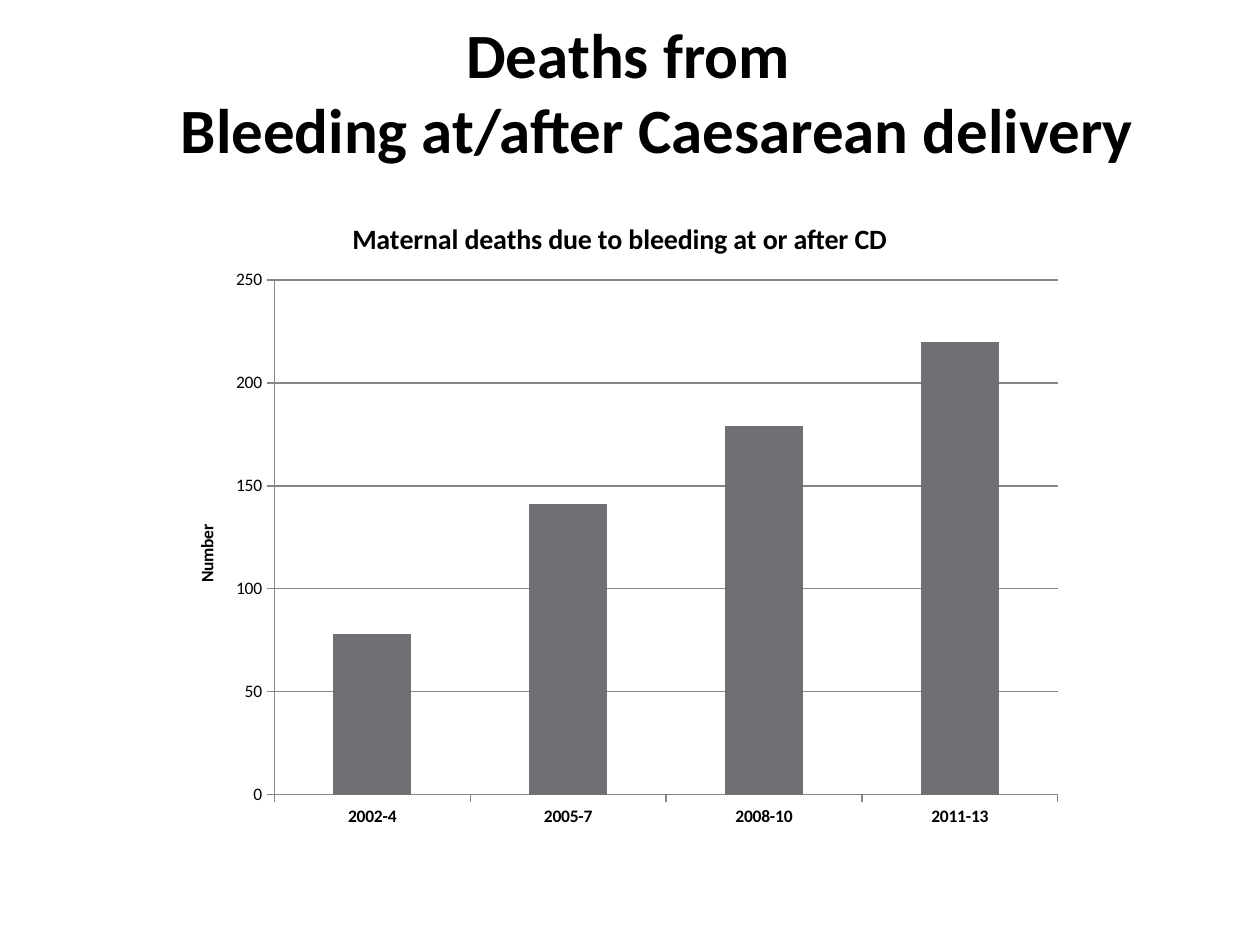
from lxml.etree import SubElement
from pptx import Presentation
from pptx.chart.data import CategoryChartData
from pptx.dml.color import RGBColor
from pptx.enum.chart import XL_CHART_TYPE, XL_TICK_MARK
from pptx.enum.text import MSO_ANCHOR, PP_ALIGN
from pptx.oxml.ns import qn
from pptx.util import Inches, Pt

BLACK = RGBColor(0x00, 0x00, 0x00)
BAR_GREY = RGBColor(0x6F, 0x6F, 0x74)
LINE_GREY = RGBColor(0x86, 0x86, 0x86)
FONT = "Calibri"


def set_values(target, values):
    for name, value in values.items():
        setattr(target, name, value)


def place(element, index, **fractions):
    """Give a chart part a manual layout in fractions of the chart area."""
    for old_layout in element.findall(qn("c:layout")):
        element.remove(old_layout)
    layout = SubElement(element, qn("c:layout"))
    element.insert(index, layout)
    manual = SubElement(layout, qn("c:manualLayout"))
    if "w" in fractions:
        SubElement(manual, qn("c:layoutTarget")).set("val", "inner")
    for axis in ("x", "y"):
        SubElement(manual, qn(f"c:{axis}Mode")).set("val", "edge")
    for name, value in fractions.items():
        SubElement(manual, qn(f"c:{name}")).set("val", str(value))


class SlideBuilder:
    def __init__(self, presentation):
        self.slide = presentation.slides.add_slide(presentation.slide_layouts[5])

    def style(self, font, size, bold=False):
        set_values(font, {"name": FONT, "size": Pt(size), "bold": bold})
        font.color.rgb = BLACK

    def title(self, lines, left, top, width, height):
        shape = self.slide.shapes.title
        set_values(shape, {"left": Inches(left), "top": Inches(top),
                           "width": Inches(width), "height": Inches(height)})
        frame = shape.text_frame
        # The deep bottom margin lifts the two lines above the chart
        set_values(frame, {"word_wrap": True, "margin_bottom": Inches(0.57),
                           "vertical_anchor": MSO_ANCHOR.MIDDLE})
        frame.text = "\n".join(text for text, _, _ in lines)
        for paragraph, (_, left_indent, right_indent) in zip(frame.paragraphs, lines):
            set_values(paragraph, {"alignment": PP_ALIGN.CENTER, "space_before": Pt(0)})
            properties = paragraph._p.get_or_add_pPr()
            properties.set("marL", str(Inches(left_indent)))
            properties.set("marR", str(Inches(right_indent)))
            self.style(paragraph.runs[0].font, 36, True)

    def chart_text(self, chart_title, text, size, **position):
        chart_title.text_frame.text = text
        self.style(chart_title.text_frame.paragraphs[0].runs[0].font, size, True)
        place(chart_title._element, 1, **position)

    def axis(self, axis, bold):
        set_values(axis, {"major_tick_mark": XL_TICK_MARK.OUTSIDE,
                          "minor_tick_mark": XL_TICK_MARK.NONE})
        self.style(axis.tick_labels.font, 10, bold)
        self.line(axis.format.line)

    def line(self, line):
        line.width = Pt(0.75)
        line.color.rgb = LINE_GREY

    def column_chart(self, title, value_title, values, left, top, width, height):
        data = CategoryChartData()
        data.categories = list(values)
        data.add_series("Series 1", list(values.values()))
        chart = self.slide.shapes.add_chart(
            XL_CHART_TYPE.COLUMN_CLUSTERED, Inches(left), Inches(top),
            Inches(width), Inches(height), data).chart
        set_values(chart, {"has_legend": False, "has_title": True})
        self.style(chart.font, 10)
        self.chart_text(chart.chart_title, title, 16, x=0.2, y=0.04)

        # Bars
        plot = chart.plots[0]
        set_values(plot, {"gap_width": 150, "vary_by_categories": False})
        fill = plot.series[0].format.fill
        fill.solid()
        fill.fore_color.rgb = BAR_GREY

        # Axes and gridlines
        self.axis(chart.category_axis, True)
        value_axis = chart.value_axis
        self.axis(value_axis, False)
        set_values(value_axis, {"minimum_scale": 0, "maximum_scale": 250,
                                "major_unit": 50, "has_major_gridlines": True})
        self.line(value_axis.major_gridlines.format.line)
        self.chart_text(value_axis.axis_title, value_title, 10, x=0.03, y=0.51)
        plot_area = chart._chartSpace.find(".//" + qn("c:plotArea"))
        place(plot_area, 0, x=0.12, y=0.14, w=0.86, h=0.79)


def main():
    presentation = Presentation()
    set_values(presentation, {"slide_width": Inches(10), "slide_height": Inches(7.5)})
    builder = SlideBuilder(presentation)

    # Heading: text, left indent, right indent
    builder.title([("Deaths from", 0, 0.12),
                   ("Bleeding at/after Caesarean delivery", 0.34, 0)],
                  0.12, 0.48, 9.85, 1)

    # Deaths per period
    builder.column_chart(
        "Maternal deaths due to bleeding at or after CD", "Number",
        {"2002-4": 78, "2005-7": 141, "2008-10": 179, "2011-13": 220},
        1.31, 1.5, 7.23, 5.17)

    presentation.save("out.pptx")


if __name__ == "__main__":
    main()
